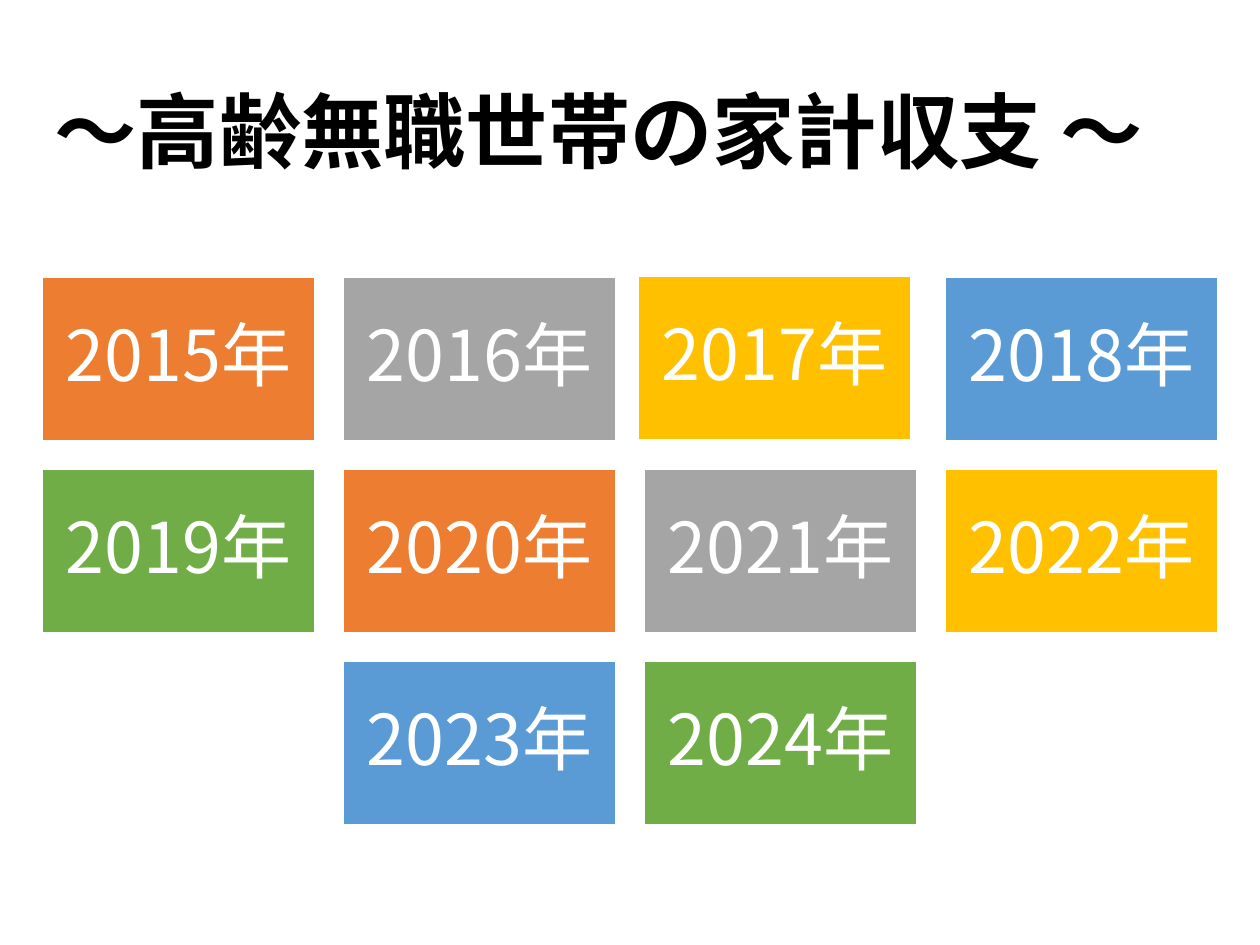
import pptx
import pptx.dml.color
import pptx.enum.shapes
import pptx.enum.text
import pptx.oxml
import pptx.oxml.ns
import pptx.util

PX = 914400 / 126
FONT = "Noto Sans CJK JP"
COLORS = {
    "text": "000000",
    "white": "FFFFFF",
    "orange": "ED7D31",
    "gray": "A5A5A5",
    "gold": "FFC000",
    "blue": "5B9BD5",
    "green": "70AD47",
}
TILE_FILLS = ["orange", "gray", "gold", "blue", "green"]
TILE_ROWS = [(0, [2015, 2016, 2017, 2018]),
             (0, [2019, 2020, 2021, 2022]),
             (1, [2023, 2024])]
TILE_W, TILE_H, STEP_X, STEP_Y = 273, 164, 301, 192
NUDGES = {2017: (-6, -1)}


def px(n):
    return pptx.util.Emu(round(n * PX))


def rgb(name):
    return pptx.dml.color.RGBColor.from_string(COLORS[name])


def place(sp, x, y, w, h):
    sp.left, sp.top, sp.width, sp.height = px(x), px(y), px(w), px(h)


def add_run(p, text, size, color, bold=False):
    r = p.add_run()
    r.text = text
    r.font.size = pptx.util.Pt(size)
    r.font.bold = bold
    r.font.name = FONT
    r.font.color.rgb = rgb(color)
    ea = pptx.oxml.parse_xml(
        f'<a:ea {pptx.oxml.ns.nsdecls("a")} typeface="{FONT}"/>')
    r.font._element.find(pptx.oxml.ns.qn("a:latin")).addnext(ea)


def add_title(s, x, y, w, h):
    sp = s.shapes.title
    place(sp, x, y, w, h)
    tf = sp.text_frame
    tf.word_wrap = True
    tf.vertical_anchor = pptx.enum.text.MSO_ANCHOR.MIDDLE
    p = tf.paragraphs[0]
    p.alignment = pptx.enum.text.PP_ALIGN.LEFT
    p.line_spacing = 0.9
    add_run(p, "～高齢無職世帯の家計収支 ～", 47, "text", bold=True)


def add_year_tile(s, x, y, year, fill):
    sp = s.shapes.add_shape(pptx.enum.shapes.MSO_SHAPE.RECTANGLE,
                            px(x), px(y), px(TILE_W), px(TILE_H))
    sp.shadow.inherit = False
    sp.fill.solid()
    sp.fill.fore_color.rgb = rgb(fill)
    sp.line.color.rgb = rgb("white")
    sp.line.width = pptx.util.Pt(1)
    tf = sp.text_frame
    tf.word_wrap = True
    tf.vertical_anchor = pptx.enum.text.MSO_ANCHOR.MIDDLE
    tf.margin_left = tf.margin_right = px(21)
    tf.margin_top = tf.margin_bottom = px(21)
    p = tf.paragraphs[0]
    p.alignment = pptx.enum.text.PP_ALIGN.CENTER
    p.line_spacing = 0.9
    add_run(p, f"{year}年", 40, "white")


def add_year_grid(s, x, y):
    for row, (first_col, years) in enumerate(TILE_ROWS):
        for col, year in enumerate(years, first_col):
            dx, dy = NUDGES.get(year, (0, 0))
            fill = TILE_FILLS[(year - 2015) % len(TILE_FILLS)]
            add_year_tile(s, x + col * STEP_X + dx, y + row * STEP_Y + dy,
                          year, fill)


def main():
    prs = pptx.Presentation()
    prs.slide_width, prs.slide_height = px(1260), px(945)
    s = prs.slides.add_slide(prs.slide_layouts[5])
    add_title(s, 42, 44, 1179, 183)
    add_year_grid(s, 42, 277)
    prs.save("out.pptx")


if __name__ == "__main__":
    main()
